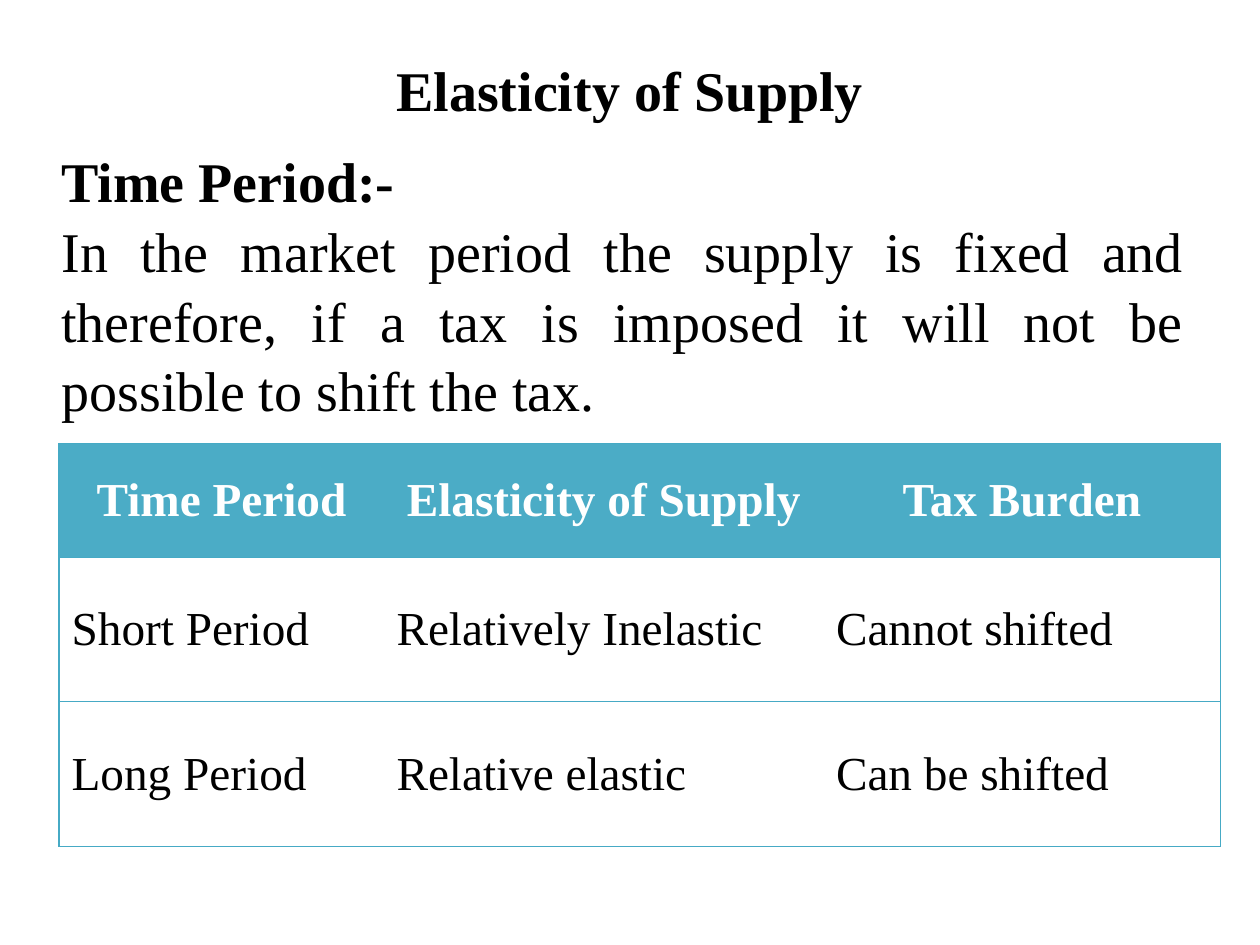
import pptx
import pptx.util
import pptx.dml.color
import pptx.enum.text
import lxml.etree
from dataclasses import dataclass
from pptx.oxml.ns import qn

Cm = pptx.util.Cm
Pt = pptx.util.Pt
Color = pptx.dml.color.RGBColor.from_string
Align = pptx.enum.text.PP_ALIGN
Anchor = pptx.enum.text.MSO_ANCHOR


@dataclass
class Theme:
    font: str = "Times New Roman"
    black: str = "000000"
    white: str = "FFFFFF"
    teal: str = "4BACC6"
    edge: str = "46AAC5"
    large: int = 32
    small: int = 27


theme = Theme()


def write(para, text, size=theme.large, color=theme.black, bold=False, align=Align.JUSTIFY):
    para.alignment = align
    run = para.add_run()
    run.text = text
    run.font.name = theme.font
    run.font.size = Pt(size)
    run.font.bold = bold
    run.font.color.rgb = Color(color)


def border(cell, sides):
    props = cell._tc.get_or_add_tcPr()
    for spot, side in enumerate(("lnL", "lnR", "lnT", "lnB")):
        line = lxml.etree.Element(qn("a:" + side), w=str(Pt(0.75)))
        if side in sides:
            fill = lxml.etree.SubElement(line, qn("a:solidFill"))
            lxml.etree.SubElement(fill, qn("a:srgbClr"), val=theme.edge)
        else:
            lxml.etree.SubElement(line, qn("a:noFill"))
        props.insert(spot, line)


deck = pptx.Presentation()
deck.slide_width, deck.slide_height = Cm(25.4), Cm(19.05)
slide = deck.slides.add_slide(deck.slide_layouts[5])

title = slide.shapes.title
title.left, title.top, title.width, title.height = Cm(1.27), Cm(0.41), Cm(22.86), Cm(2.77)
title.text_frame.vertical_anchor = Anchor.MIDDLE
write(title.text_frame.paragraphs[0], "Elasticity of Supply", bold=True, align=Align.CENTER)

rows = [
    ("Time Period", "Elasticity of Supply", "Tax Burden"),
    ("Short Period", "Relatively Inelastic", "Cannot shifted"),
    ("Long Period", "Relative elastic", "Can be shifted"),
]
wides = [6.55, 8.86, 8.0]
highs = [2.29, 2.92, 2.92]
frame = slide.shapes.add_table(
    len(rows), len(wides), Cm(1.19), Cm(8.94), Cm(sum(wides)), Cm(sum(highs)))
table = frame.table
for col, wide in zip(table.columns, wides):
    col.width = Cm(wide)
for row, high in zip(table.rows, highs):
    row.height = Cm(high)

for r, texts in enumerate(rows):
    head = r == 0
    for c, text in enumerate(texts):
        cell = table.cell(r, c)
        cell.vertical_anchor = Anchor.MIDDLE
        cell.fill.solid()
        cell.fill.fore_color.rgb = Color(theme.teal if head else theme.white)
        write(cell.text_frame.paragraphs[0], text, size=theme.small, bold=head,
              color=theme.white if head else theme.black,
              align=Align.CENTER if head else Align.JUSTIFY)
        sides = ["lnT", "lnB"]
        if c == 0:
            sides.append("lnL")
        if c == len(texts) - 1:
            sides.append("lnR")
        border(cell, sides)

body = slide.shapes.add_textbox(Cm(0.99), Cm(2.77), Cm(23.14), Cm(15.47)).text_frame
body.word_wrap = True
lines = [
    ("Time Period:-", True),
    ("In the market period the supply is fixed and therefore, if a tax is imposed "
     "it will not be possible to shift the tax.", False),
]
for i, (text, bold) in enumerate(lines):
    para = body.add_paragraph() if i else body.paragraphs[0]
    para.line_spacing = 1.04
    write(para, text, bold=bold)

deck.save("out.pptx")
